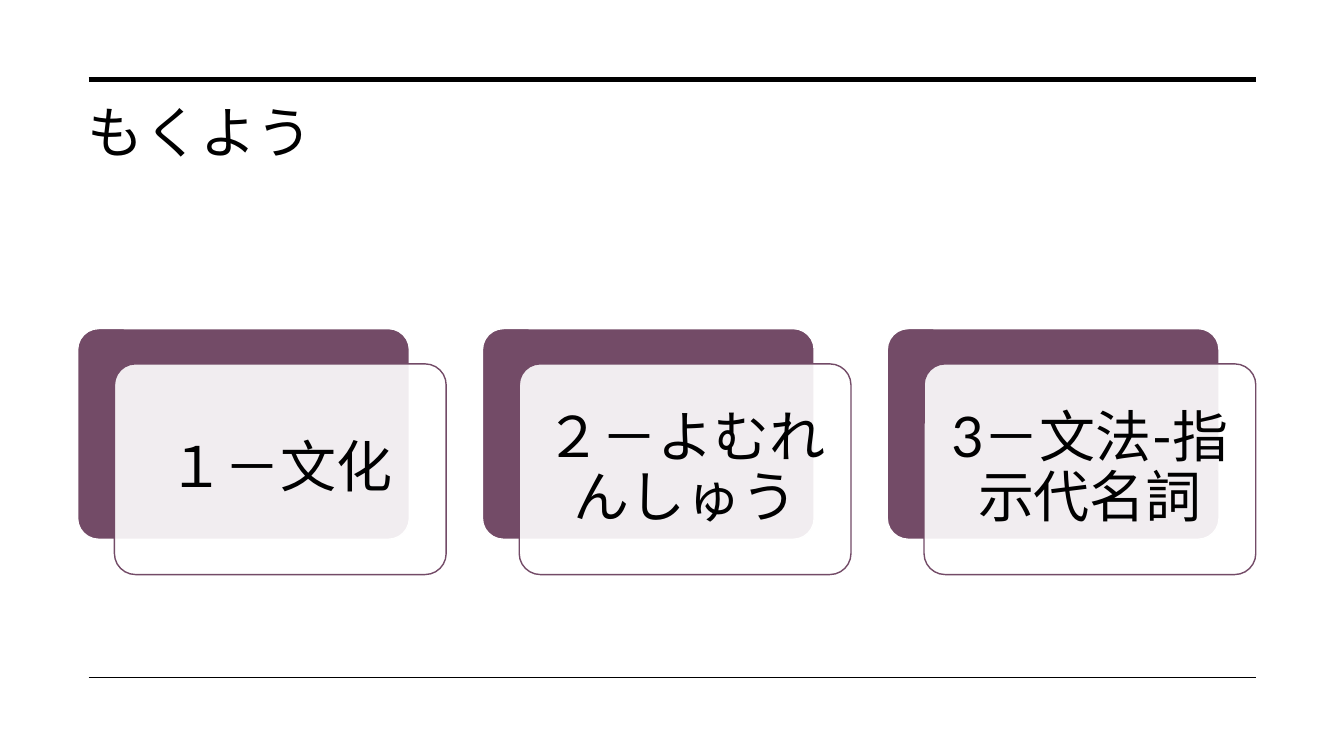
from lxml.etree import SubElement
from pptx import Presentation
from pptx.dml.color import RGBColor
from pptx.enum.shapes import MSO_CONNECTOR, MSO_SHAPE
from pptx.enum.text import MSO_ANCHOR, PP_ALIGN
from pptx.oxml.ns import qn
from pptx.util import Inches, Pt

BLACK = RGBColor(0x00, 0x00, 0x00)
WHITE = RGBColor(0xFF, 0xFF, 0xFF)
PLUM = RGBColor(0x73, 0x4B, 0x67)

LEFT, TOP = 0.77, 3.26
COLUMN_PITCH = 4.015
CARD_WIDTH, CARD_HEIGHT = 3.29, 2.09
CARD_OFFSET_X, CARD_OFFSET_Y = 0.365, 0.35
RULE_LEFT, RULE_RIGHT = 0.88, 12.46
TOPICS = ("１－文化", "２－よむれんしゅう", "3－文法-指示代名詞")


def format_text(paragraph, font_name):
    """Apply the size, colour and line spacing shared by all text."""
    paragraph.line_spacing = 0.9
    for run in paragraph.runs:
        run.font.name = font_name
        run.font.size = Pt(40)
        run.font.color.rgb = BLACK


def add_title(slide, text):
    """Fill and place the title placeholder."""
    title = slide.shapes.title
    title.left, title.top = Inches(LEFT), Inches(0.99)
    title.width, title.height = Inches(11.69), Inches(1.26)
    frame = title.text_frame
    frame.text = text
    frame.vertical_anchor = MSO_ANCHOR.TOP
    paragraph = frame.paragraphs[0]
    paragraph.alignment = PP_ALIGN.LEFT
    format_text(paragraph, "Arial Narrow")
    paragraph.runs[0].font._element.set("spc", "30")


def add_rule(slide, y, weight):
    """Draw a horizontal black rule across the content width."""
    rule = slide.shapes.add_connector(
        MSO_CONNECTOR.STRAIGHT, Inches(RULE_LEFT), Inches(y), Inches(RULE_RIGHT), Inches(y)
    )
    rule.line.color.rgb = BLACK
    rule.line.width = Pt(weight)
    SubElement(rule._element.spPr, qn("a:effectLst"))


def add_card(slide, left, top, fill, line):
    """Draw one rounded card and return it."""
    card = slide.shapes.add_shape(
        MSO_SHAPE.ROUNDED_RECTANGLE,
        Inches(left), Inches(top), Inches(CARD_WIDTH), Inches(CARD_HEIGHT),
    )
    card.adjustments[0] = 0.1
    card.shadow.inherit = False
    card.fill.solid()
    card.fill.fore_color.rgb = fill
    card.line.color.rgb = line
    card.line.width = Pt(1)
    return card


def add_topic(slide, column, text):
    """Draw a plum card with a translucent labelled card in front."""
    left = LEFT + column * COLUMN_PITCH
    add_card(slide, left, TOP, PLUM, WHITE)
    front = add_card(slide, left + CARD_OFFSET_X, TOP + CARD_OFFSET_Y, WHITE, PLUM)
    color = front._element.spPr.find(qn("a:solidFill")).find(qn("a:srgbClr"))
    SubElement(color, qn("a:alpha")).set("val", "90000")

    frame = front.text_frame
    frame.text = text
    frame.word_wrap = True
    frame.vertical_anchor = MSO_ANCHOR.MIDDLE
    frame.margin_left = frame.margin_right = Inches(0.17)
    frame.margin_top = frame.margin_bottom = Inches(0.17)
    paragraph = frame.paragraphs[0]
    paragraph.alignment = PP_ALIGN.CENTER
    format_text(paragraph, "Lato")


def main():
    """Build and save the slide."""
    presentation = Presentation()
    presentation.slide_width = Inches(13.33)
    presentation.slide_height = Inches(7.5)
    slide = presentation.slides.add_slide(presentation.slide_layouts[5])
    add_title(slide, "もくよう")
    add_rule(slide, 0.79, 3.5)
    add_rule(slide, 6.72, 1)
    for column, text in enumerate(TOPICS):
        add_topic(slide, column, text)
    presentation.save("out.pptx")


if __name__ == "__main__":
    main()
